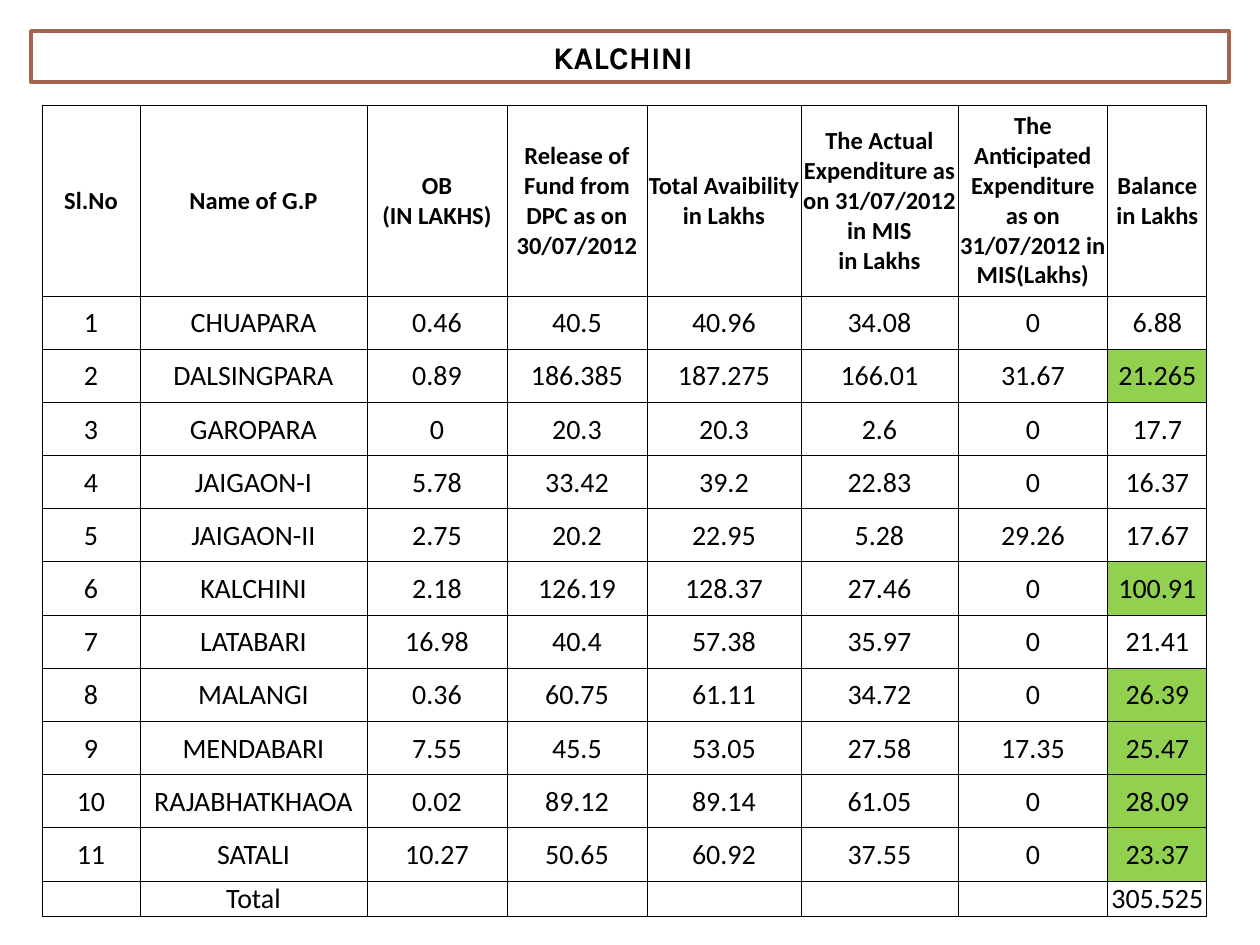
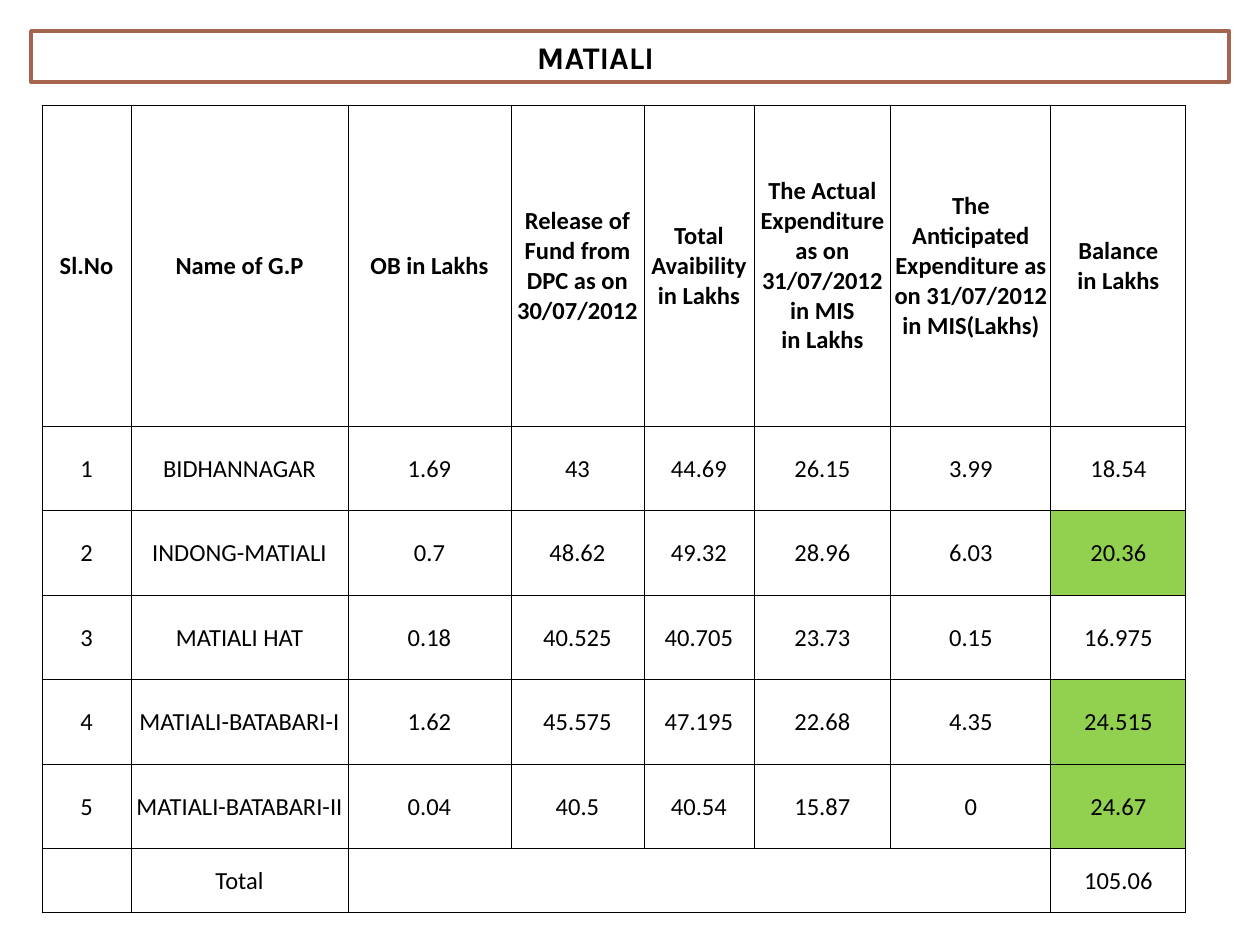
from dataclasses import dataclass

from lxml.etree import SubElement
from pptx import Presentation
from pptx.dml.color import RGBColor
from pptx.enum.text import MSO_ANCHOR as Anchor, MSO_AUTO_SIZE as Fit, PP_ALIGN as Align
from pptx.oxml.ns import qn
from pptx.util import Pt

INCH = 126  # px to the inch
SCALE = 914400 / INCH

BLACK = RGBColor(0x00, 0x00, 0x00)
WHITE = RGBColor(0xFF, 0xFF, 0xFF)
BROWN = RGBColor(0xA5, 0x64, 0x4E)
GREEN = RGBColor(0x92, 0xD0, 0x50)

TITLE_FONT, BODY_FONT = "Karla", "Calibri"
TITLE_ONLY = 5
LEFT, TOP = 42, 105
BAND = (31, 31, 1198, 51)

HEADS = (
    "Release of Fund from DPC as on 30/07/2012",
    "Total Avaibility in Lakhs",
    "The Actual Expenditure as on 31/07/2012 in MIS\nin Lakhs",
    "The Anticipated Expenditure as on 31/07/2012 in MIS(Lakhs)",
    "Balance\nin Lakhs",
)


@dataclass(frozen=True)
class Village:
    name: str
    sums: str
    high: bool = False


@dataclass(frozen=True)
class Block:
    name: str
    indent: int
    opening: str
    widths: tuple[int, ...]
    head: int
    body: int
    foot: int
    size: int
    rows: tuple[Village, ...]
    total: str
    merge: bool = False


BLOCKS = (
    Block(
        "KALCHINI", 522, "OB\n(IN LAKHS)",
        (98, 227, 140, 140, 154, 157, 150, 99), 191, 585, 34, 16,
        (
            Village("CHUAPARA", "0.46 40.5 40.96 34.08 0 6.88"),
            Village("DALSINGPARA", "0.89 186.385 187.275 166.01 31.67 21.265", True),
            Village("GAROPARA", "0 20.3 20.3 2.6 0 17.7"),
            Village("JAIGAON-I", "5.78 33.42 39.2 22.83 0 16.37"),
            Village("JAIGAON-II", "2.75 20.2 22.95 5.28 29.26 17.67"),
            Village("KALCHINI", "2.18 126.19 128.37 27.46 0 100.91", True),
            Village("LATABARI", "16.98 40.4 57.38 35.97 0 21.41"),
            Village("MALANGI", "0.36 60.75 61.11 34.72 0 26.39", True),
            Village("MENDABARI", "7.55 45.5 53.05 27.58 17.35 25.47", True),
            Village("RAJABHATKHAOA", "0.02 89.12 89.14 61.05 0 28.09", True),
            Village("SATALI", "10.27 50.65 60.92 37.55 0 23.37", True),
        ),
        "305.525",
    ),
    Block(
        "MATIALI", 506, "OB in Lakhs",
        (89, 217, 163, 133, 110, 137, 160, 135), 321, 423, 64, 14,
        (
            Village("BIDHANNAGAR", "1.69 43 44.69 26.15 3.99 18.54"),
            Village("INDONG-MATIALI", "0.7 48.62 49.32 28.96 6.03 20.36", True),
            Village("MATIALI HAT", "0.18 40.525 40.705 23.73 0.15 16.975"),
            Village("MATIALI-BATABARI-I", "1.62 45.575 47.195 22.68 4.35 24.515", True),
            Village("MATIALI-BATABARI-II", "0.04 40.5 40.54 15.87 0 24.67", True),
        ),
        "105.06", True,
    ),
)


def px(n: float) -> int:
    return round(n * SCALE)


def style(para, name: str, size: int, bold: bool, align: Align) -> None:
    para.alignment = align
    font = para.font
    font.name, font.size, font.bold = name, Pt(size), bold
    font.color.rgb = BLACK


def add_title(slide, block: Block) -> None:
    title = slide.shapes.title
    title.left, title.top, title.width, title.height = map(px, BAND)
    title.fill.solid()
    title.fill.fore_color.rgb = WHITE
    title.line.color.rgb = BROWN
    title.line.width = Pt(2)
    frame = title.text_frame
    frame.text = block.name
    frame.auto_size = Fit.NONE
    frame.vertical_anchor = Anchor.MIDDLE
    frame.margin_left = px(block.indent)
    frame.margin_top = frame.margin_bottom = 0
    style(frame.paragraphs[0], TITLE_FONT, 18, True, Align.LEFT)


def add_edges(cell) -> None:
    """Draw a thin black line on all four sides of a cell."""
    props = cell._tc.get_or_add_tcPr()
    for side in ("lnL", "lnR", "lnT", "lnB"):
        line = SubElement(props, qn(f"a:{side}"), w=str(Pt(0.5)))
        fill = SubElement(line, qn("a:solidFill"))
        SubElement(fill, qn("a:srgbClr"), val=str(BLACK))


def fill_cell(cell, text: str, size: int, bold: bool, high: bool) -> None:
    add_edges(cell)
    if high:
        cell.fill.solid()
        cell.fill.fore_color.rgb = GREEN
    else:
        cell.fill.background()
    cell.vertical_anchor = Anchor.MIDDLE
    cell.margin_left = cell.margin_right = cell.margin_top = px(1)
    cell.margin_bottom = 0
    cell.text_frame.text = text
    for para in cell.text_frame.paragraphs:
        style(para, BODY_FONT, size, bold, Align.CENTER)
        if not text:  # keeps an empty cell as low as its row
            SubElement(para._p, qn("a:endParaRPr"), sz=str(size * 100))


def add_grid(slide, block: Block) -> None:
    count = len(block.rows)
    heights = [block.head, *[block.body / count] * count, block.foot]
    texts = [
        ("Sl.No", "Name of G.P", block.opening, *HEADS),
        *((str(n), row.name, *row.sums.split()) for n, row in enumerate(block.rows, 1)),
        ("", "Total", *[""] * 5, block.total),
    ]
    last = len(block.widths) - 1
    table = slide.shapes.add_table(
        len(texts), last + 1, px(LEFT), px(TOP), px(sum(block.widths)), px(sum(heights))
    ).table
    table.first_row = table.horz_banding = False
    for col, width in zip(table.columns, block.widths):
        col.width = px(width)
    for r, (line, height) in enumerate(zip(texts, heights)):
        table.rows[r].height = px(height)
        high = 0 < r <= count and block.rows[r - 1].high
        for c, text in enumerate(line):
            size = block.size if r else 14
            fill_cell(table.cell(r, c), text, size, r == 0, high and c == last)
    if block.merge:
        table.cell(count + 1, 2).merge(table.cell(count + 1, last - 1))


def main() -> None:
    deck = Presentation()
    deck.slide_width, deck.slide_height = px(10 * INCH), px(7.5 * INCH)
    for block in BLOCKS:
        slide = deck.slides.add_slide(deck.slide_layouts[TITLE_ONLY])
        add_title(slide, block)
        add_grid(slide, block)
    deck.save("out.pptx")


if __name__ == "__main__":
    main()
